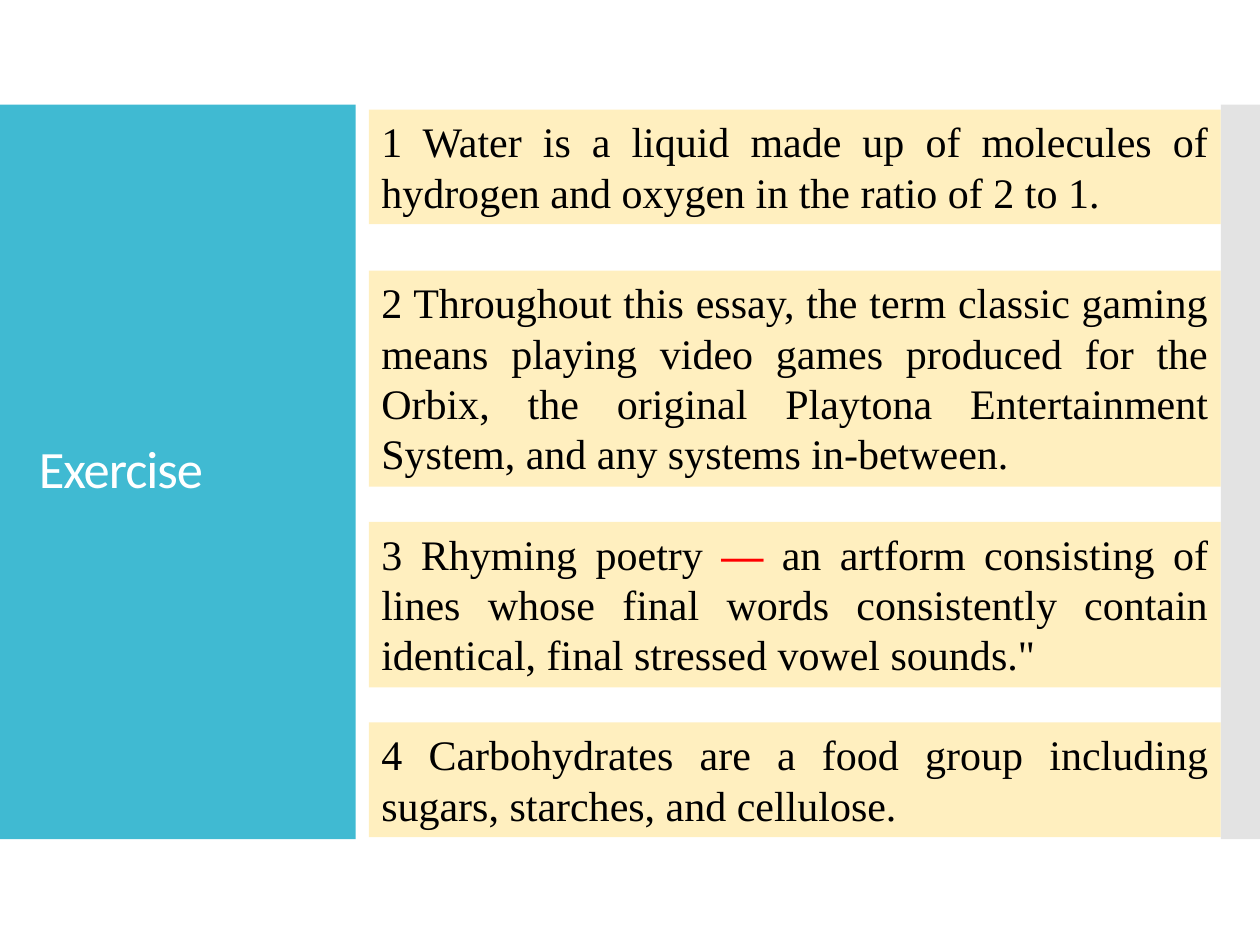
from pptx import Presentation
from pptx.dml.color import RGBColor
from pptx.enum.shapes import MSO_SHAPE
from pptx.enum.text import MSO_ANCHOR, MSO_AUTO_SIZE, PP_ALIGN
from pptx.oxml.ns import qn
from pptx.util import Pt
from lxml import etree

RECT = MSO_SHAPE.RECTANGLE
TOP, MIDDLE = MSO_ANCHOR.TOP, MSO_ANCHOR.MIDDLE
LEFT, JUSTIFY = PP_ALIGN.LEFT, PP_ALIGN.JUSTIFY
FIXED, GROW = MSO_AUTO_SIZE.NONE, MSO_AUTO_SIZE.SHAPE_TO_FIT_TEXT
DASH = "—"


def add_rect(x, y, w, h, code, alpha=100):
    rect = slide.shapes.add_shape(RECT, Pt(x), Pt(y), Pt(w), Pt(h))
    rect.shadow.inherit = False
    rect.line.fill.background()
    rect.fill.solid()
    rect.fill.fore_color.rgb = RGBColor.from_string(code)
    if alpha < 100:
        tint = rect.element.spPr.find(qn("a:solidFill"))[0]
        etree.SubElement(tint, qn("a:alpha"), val=str(alpha * 1000))
    return rect


def set_font(font, name, size, code):
    font.name = name
    font.size = Pt(size)
    font.color.rgb = RGBColor.from_string(code)


deck = Presentation()
deck.slide_width, deck.slide_height = Pt(720), Pt(540)
slide = deck.slides.add_slide(deck.slide_layouts[5])

# Side panels
add_rect(0, 59.8, 203.3, 419.8, "40BAD2")
add_rect(697.6, 59.8, 22.4, 419.8, "C8C8C8", 50)

# Title, brought in front of the panels
title = slide.shapes.title
title.element.getparent().append(title.element)
title.left, title.top = Pt(15), Pt(88.5)
title.width, title.height = Pt(174), Pt(362)
frame = title.text_frame
frame.text = "Exercise"
frame.auto_size = FIXED
frame.word_wrap = True
frame.vertical_anchor = MIDDLE
para = frame.paragraphs[0]
para.alignment = LEFT
para.line_spacing = 0.9
set_font(para.font, "Calibri", 30, "FFFFFF")
para.runs[0]._r.get_or_add_rPr().set("spc", "-60")

# Definitions: top, height, text
items = [
    (62.6, 65.5, "1 Water is a liquid made up of molecules of hydrogen and "
     "oxygen in the ratio of 2 to 1."),
    (154.6, 123.6, "2 Throughout this essay, the term classic gaming means "
     "playing video games produced for the Orbix, the original Playtona "
     "Entertainment System, and any systems in-between."),
    (298.3, 94.5, "3 Rhyming poetry — an artform consisting of lines whose "
     "final words consistently contain identical, final stressed vowel "
     "sounds.\""),
    (412.8, 65.5, "4 Carbohydrates are a food group including sugars, "
     "starches, and cellulose."),
]
for top, high, text in items:
    box = add_rect(210.8, top, 486.7, high, "FFC000", 25)
    frame = box.text_frame
    frame.word_wrap = True
    frame.auto_size = GROW
    frame.vertical_anchor = TOP
    para = frame.paragraphs[0]
    para.alignment = JUSTIFY
    set_font(para.font, "Times New Roman", 24, "000000")
    for part in filter(None, text.partition(DASH)):
        run = para.add_run()
        run.text = part
        if part == DASH:
            run.font.bold = True
            run.font.color.rgb = RGBColor.from_string("FF0000")

deck.save("out.pptx")
